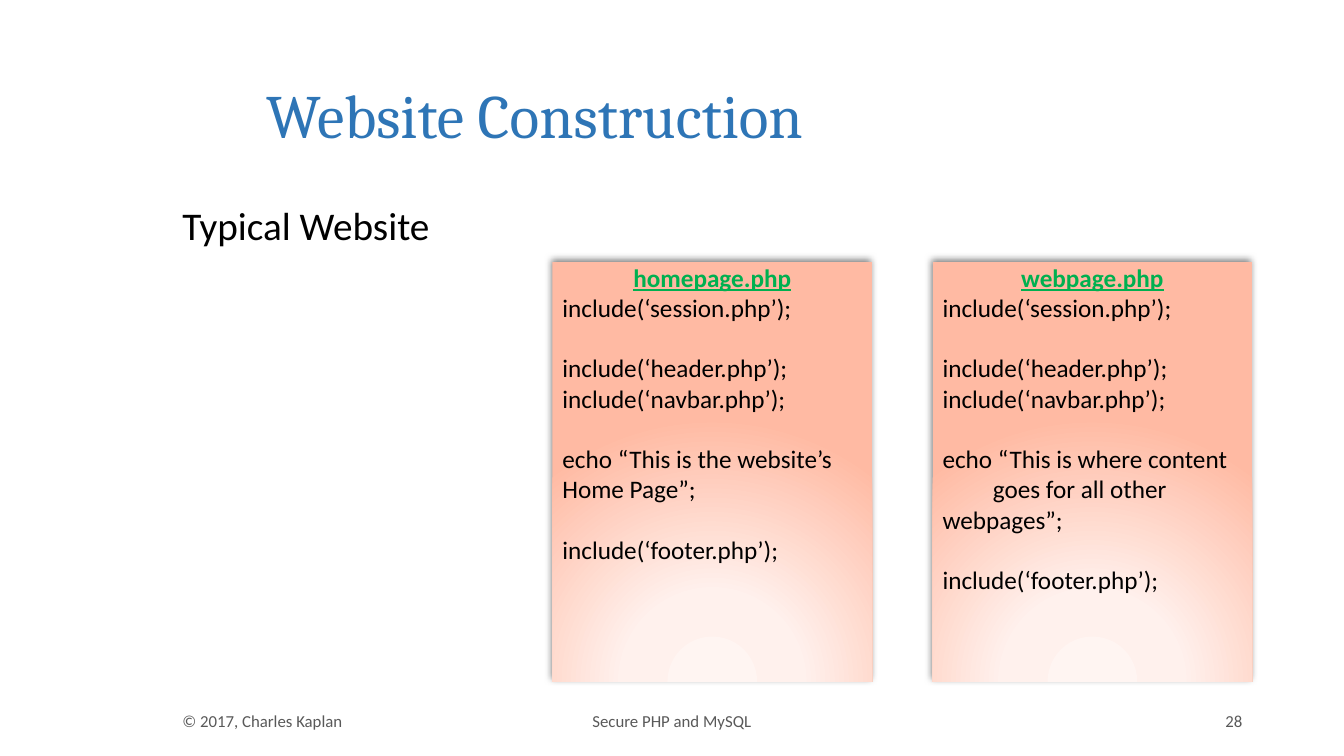
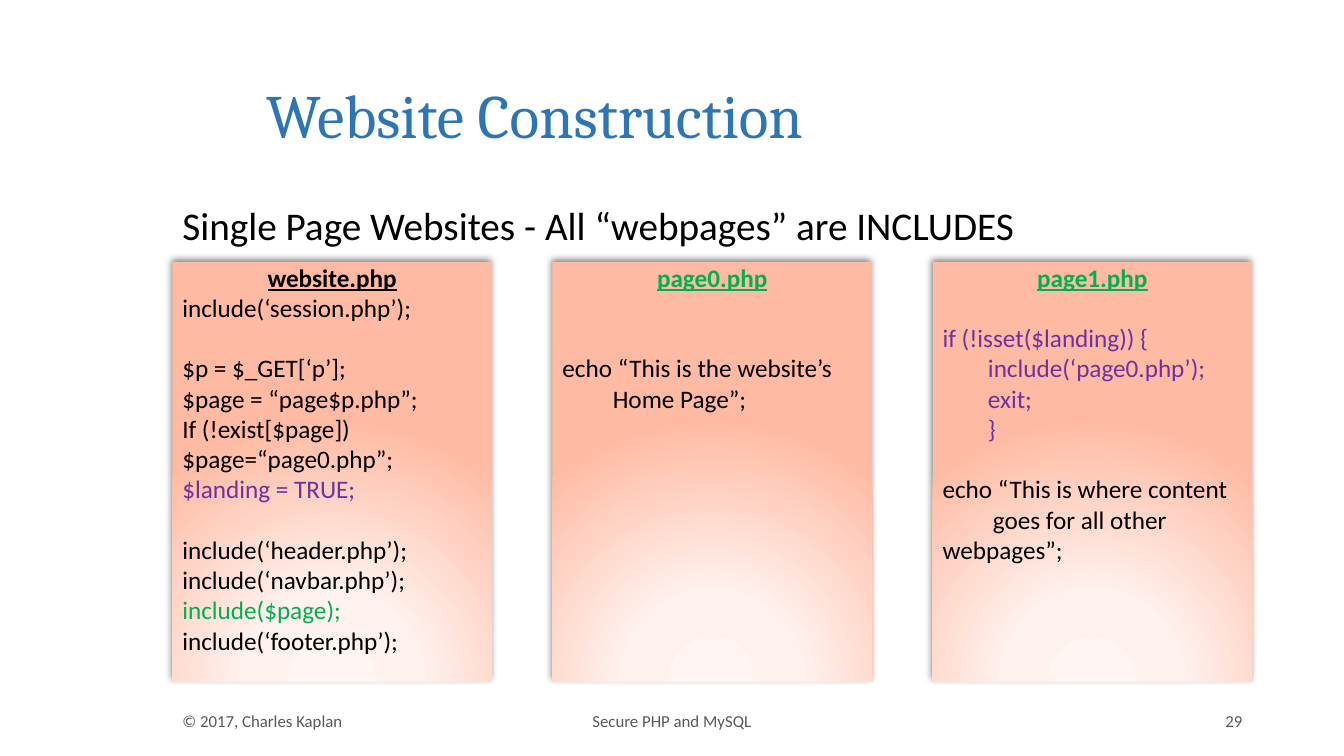
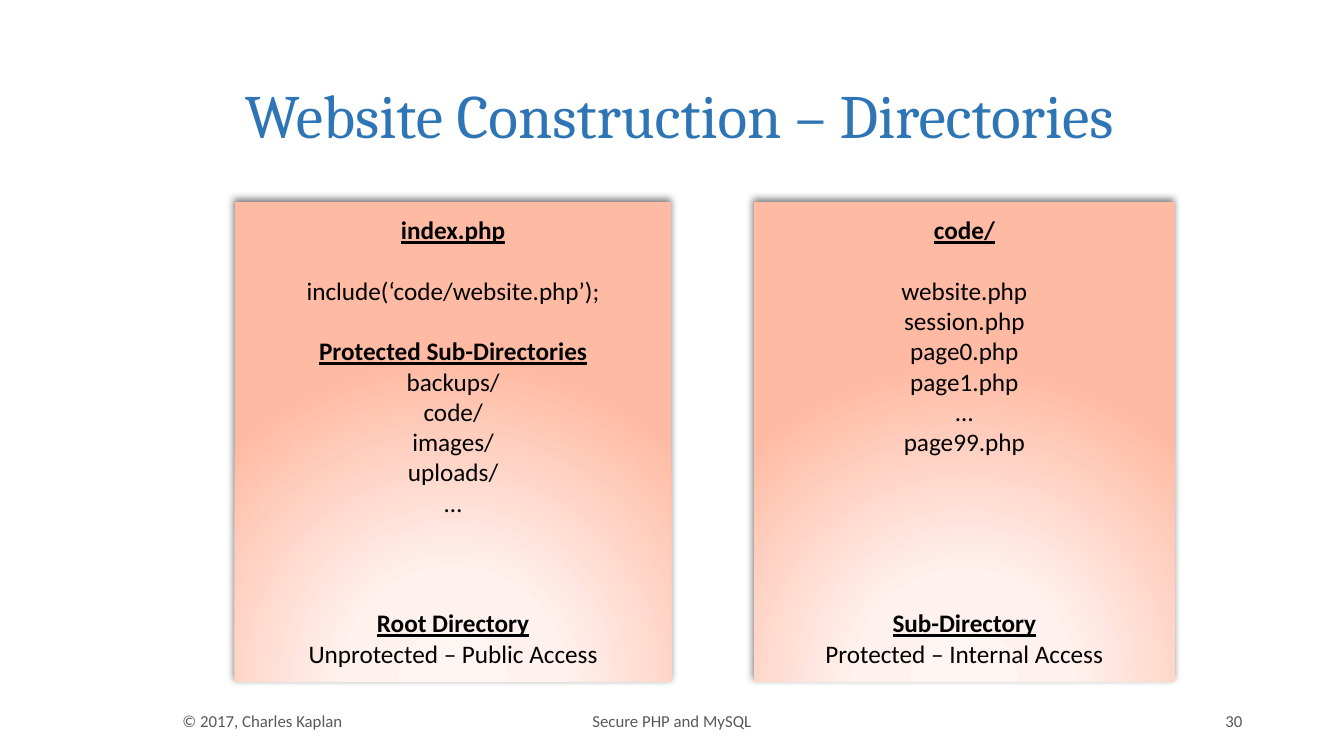
import pptx
import pptx.util
import pptx.oxml
import pptx.oxml.ns
import pptx.dml.color
import pptx.enum.text
import pptx.enum.shapes

Inches, Pt = pptx.util.Inches, pptx.util.Pt
ALIGN = pptx.enum.text.PP_ALIGN
ANCHOR = pptx.enum.text.MSO_ANCHOR

BLACK, BLUE, GRAY, GREEN, PURPLE = "000000", "2E75B6", "595959", "00B050", "7030A0"
LEFT, RIGHT = 1.71, 12.42
CARD_W, CARD_PITCH, CARD_BOTTOM = 3.17, 3.77, 6.76
CODE_TOP, DIRECTORY_TOP = 2.6, 2
LINE = 21.6
FIRST_NUMBER = 28

STYLES = {
    "code": (BLACK, False, ALIGN.LEFT),
    "green": (GREEN, False, ALIGN.LEFT),
    "purple": (PURPLE, False, ALIGN.LEFT),
    "item": (BLACK, False, ALIGN.CENTER),
    "head": (BLACK, True, ALIGN.CENTER),
    "green head": (GREEN, True, ALIGN.CENTER),
}

OTHER_PAGES = "echo “This is where content\v\tgoes for all other\vwebpages”;"

HOMEPAGE = [
    ("green head", "homepage.php"),
    ("code", "include(‘session.php’);", "",
     "include(‘header.php’);", "include(‘navbar.php’);", "",
     "echo “This is the website’s\vHome Page”;", "",
     "include(‘footer.php’);"),
]
WEBPAGE = [
    ("green head", "webpage.php"),
    ("code", "include(‘session.php’);", "",
     "include(‘header.php’);", "include(‘navbar.php’);", "",
     OTHER_PAGES, "", "include(‘footer.php’);"),
]
WEBSITE = [
    ("head", "website.php"),
    ("code", "include(‘session.php’);", "",
     "$p = $_GET[‘p’];", "$page = “page$p.php”;",
     "If (!exist[$page])", "$page=“page0.php”;"),
    ("purple", "$landing = TRUE;", ""),
    ("code", "include(‘header.php’);", "include(‘navbar.php’);"),
    ("green", "include($page);"),
    ("code", "include(‘footer.php’);"),
]
PAGE0 = [
    ("green head", "page0.php"),
    ("code", "", "", "echo “This is the website’s\v\tHome Page”;"),
]
PAGE1 = [
    ("green head", "page1.php"),
    ("purple", "", "if (!isset($landing)) {",
     "        include(‘page0.php’);", "        exit;", "        }", ""),
    ("code", OTHER_PAGES),
]
ROOT = [
    ("head", "index.php"),
    ("item", "", "include(‘code/website.php’);", ""),
    ("head", "Protected Sub-Directories"),
    ("item", "backups/", "code/", "images/", "uploads/", "…", "", "", ""),
    ("head", "Root Directory"),
    ("item", "Unprotected – Public Access"),
]
CODE = [
    ("head", "code/"),
    ("item", "", "website.php", "session.php", "page0.php", "page1.php", "…",
     "page99.php", "", "", "", "", ""),
    ("head", "Sub-Directory"),
    ("item", "Protected – Internal Access"),
]


def column(index):
    return LEFT + index * CARD_PITCH, CODE_TOP, CARD_W, 14


SLIDES = [
    ("Website Construction", 2.54, "Typical Website",
     [(column(1), HOMEPAGE), (column(2), WEBPAGE)]),
    ("Website Construction", 2.54,
     "Single Page Websites - All “webpages” are INCLUDES",
     [(column(0), WEBSITE), (column(1), PAGE0), (column(2), PAGE1)]),
    ("Website Construction – Directories", 2.33, None,
     [((2.33, DIRECTORY_TOP, 4.33, 15), ROOT),
      ((7.48, DIRECTORY_TOP, 4.17, 15), CODE)]),
]

NS = pptx.oxml.ns.nsdecls("a")
GRADIENT = (
    f'<a:gradFill {NS} rotWithShape="1"><a:gsLst>'
    + "".join(f'<a:gs pos="{pos}000"><a:srgbClr val="{color}"/></a:gs>'
              for pos, color in [(0, "FFF5F2"), (34, "FFF1ED"), (100, "FFBAA3")])
    + '</a:gsLst><a:path path="circle">'
    '<a:fillToRect l="50000" t="155000" r="50000" b="-55000"/>'
    '</a:path></a:gradFill>')
SHADOW = (
    f'<a:outerShdw {NS} blurRad="63500" dist="25400" dir="14700000" '
    'algn="t" rotWithShape="0"><a:srgbClr val="000000">'
    '<a:alpha val="50000"/></a:srgbClr></a:outerShdw>')


def rgb(color):
    return pptx.dml.color.RGBColor.from_string(color)


def set_font(p, size, color, name="Calibri", heading=False):
    font = p.font
    font.size, font.name, font.color.rgb = Pt(size), name, rgb(color)
    font.bold = font.underline = heading


def add_text(s, box, text, size, color, name="Calibri",
             align=ALIGN.LEFT, anchor=ANCHOR.MIDDLE):
    tf = s.shapes.add_textbox(*map(Inches, box)).text_frame
    tf.word_wrap, tf.vertical_anchor = True, anchor
    p = tf.paragraphs[0]
    p.text, p.alignment = text, align
    set_font(p, size, color, name)
    return p


def add_card(s, place, groups):
    left, top, width, rows = place
    height = CARD_BOTTOM - top
    sp = s.shapes.add_shape(pptx.enum.shapes.MSO_SHAPE.RECTANGLE,
                            *map(Inches, (left, top, width, height)))
    sp.line.fill.background()
    sp.fill.background()
    props = sp.fill._xPr
    props.replace(props.find(pptx.oxml.ns.qn("a:noFill")),
                  pptx.oxml.parse_xml(GRADIENT))
    sp.shadow.inherit = False
    props.find(pptx.oxml.ns.qn("a:effectLst")).append(pptx.oxml.parse_xml(SHADOW))
    tf = sp.text_frame
    tf.word_wrap, tf.vertical_anchor = True, ANCHOR.TOP
    tf.margin_top = Inches(max(0, (height - rows * LINE / 72) / 2))
    tf.margin_bottom = 0
    p, gap = None, 0
    for style, *lines in groups:
        color, heading, align = STYLES[style]
        for text in lines:
            if not text:
                gap += 1
                continue
            p = tf.add_paragraph() if p else tf.paragraphs[0]
            p.text, p.alignment = text, align
            if gap:
                p.space_before = Pt(gap * LINE)
            set_font(p, 18, color, heading=heading)
            gap = 0


def add_footer(s, number):
    for left, width, text, align in [
            (LEFT, 2.79, "© 2017, Charles Kaplan", ALIGN.LEFT),
            (5.08, 3.17, "Secure PHP and MySQL", ALIGN.CENTER),
            (RIGHT - 3.58, 3.58, str(number), ALIGN.RIGHT)]:
        add_text(s, (left, 6.95, width, 0.4), text, 12, GRAY, align=align)


def main():
    prs = pptx.Presentation()
    prs.slide_width, prs.slide_height = Inches(13.33), Inches(7.5)
    for number, (title, left, subtitle, cards) in enumerate(SLIDES, FIRST_NUMBER):
        s = prs.slides.add_slide(prs.slide_layouts[6])
        add_text(s, (left, 0.4, RIGHT - left, 1.45), title, 44, BLUE, "Cambria")
        if subtitle:
            p = add_text(s, (LEFT, 2, RIGHT - LEFT, 0.6), subtitle, 28, BLACK,
                         anchor=ANCHOR.TOP)
            p.line_spacing = 0.9
        add_footer(s, number)
        for place, groups in cards:
            add_card(s, place, groups)
    prs.save("out.pptx")


if __name__ == "__main__":
    main()
